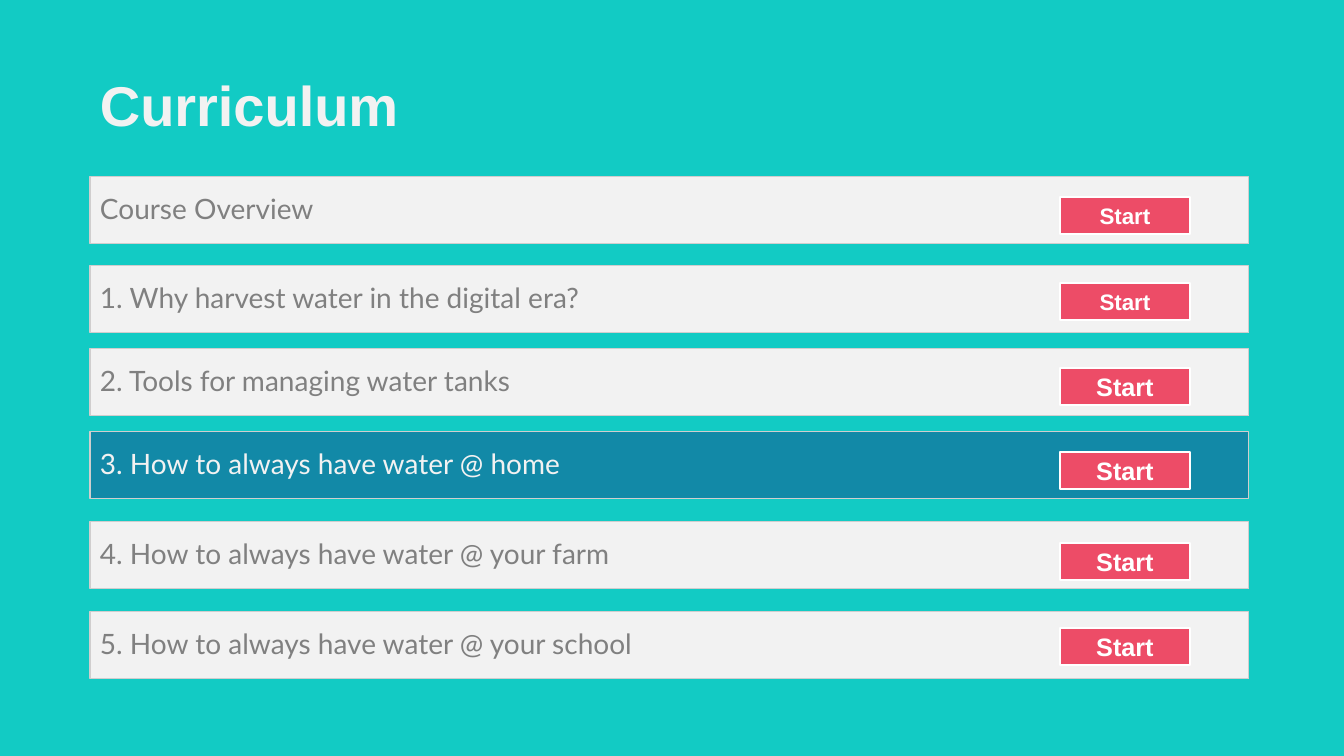
"""Build the curriculum slide with its six lesson bars and start buttons."""
from pptx import Presentation
from pptx.dml.color import RGBColor
from pptx.enum.shapes import MSO_SHAPE as Preset
from pptx.enum.text import MSO_ANCHOR as Anchor, PP_ALIGN as Align
from pptx.util import Pt

HEADING = "Curriculum"
START = "Start"
CURRENT = "3. How to always have water @ home"
LESSONS = [
    ("Course Overview", 177, 197, 16),
    ("1. Why harvest water in the digital era?", 266, 283, 16),
    ("2. Tools for managing water tanks", 349, 368, 18),
    (CURRENT, 432, 452, 18),
    ("4. How to always have water @ your farm", 522, 543, 18),
    ("5. How to always have water @ your school", 612, 628, 18),
]
THEME = {
    "background": "12CBC4", "bar": "F2F2F2", "current": "1289A7",
    "border": "D0CECE", "lesson": "808080", "light": "F2F2F2",
    "button": "ED4C67", "white": "FFFFFF",
    "heading_font": "Arial", "lesson_font": "Lato",
    "heading_size": 40, "lesson_size": 20,
}
SLIDE_W, SLIDE_H = 1344, 756
BAR_X, BAR_W, BAR_H = 90, 1159, 67
BUTTON_X, BUTTON_W, BUTTON_H = 1060, 130, 37
HEADING_Y, HEADING_H = 70, 77
EMU_PER_PX = 12192000 / SLIDE_W


def px(length):
    return round(length * EMU_PER_PX)


def color(part):
    return RGBColor.from_string(THEME[part])


def write(holder, words, font, size, ink, bold=False, align=Align.LEFT, spacing=0.9):
    frame = holder.text_frame
    frame.word_wrap = True
    frame.vertical_anchor = Anchor.MIDDLE
    line = frame.paragraphs[0]
    line.alignment = align
    line.line_spacing = spacing
    run = line.add_run()
    run.text = words
    run.font.name = THEME[font]
    run.font.size = Pt(size)
    run.font.bold = bold
    run.font.color.rgb = color(ink)


def panel(slide, x, y, w, h, fill, border, weight):
    box = slide.shapes.add_shape(Preset.RECTANGLE, px(x), px(y), px(w), px(h))
    box.shadow.inherit = False
    box.fill.solid()
    box.fill.fore_color.rgb = color(fill)
    box.line.color.rgb = color(border)
    box.line.width = Pt(weight)
    return box


def main():
    deck = Presentation()
    deck.slide_width, deck.slide_height = px(SLIDE_W), px(SLIDE_H)
    slide = deck.slides.add_slide(deck.slide_layouts[6])
    slide.background.fill.solid()
    slide.background.fill.fore_color.rgb = color("background")

    heading = slide.shapes.add_textbox(px(BAR_X), px(HEADING_Y), px(BAR_W), px(HEADING_H))
    write(heading, HEADING, "heading_font", THEME["heading_size"], "light", bold=True)

    for lesson, bar_y, button_y, start_size in LESSONS:
        fill, ink = ("current", "light") if lesson == CURRENT else ("bar", "lesson")
        bar = panel(slide, BAR_X, bar_y, BAR_W, BAR_H, fill, "border", 0.75)
        write(bar, lesson, "lesson_font", THEME["lesson_size"], ink)
        button = panel(slide, BUTTON_X, button_y, BUTTON_W, BUTTON_H, "button", "white", 1)
        write(button, START, "heading_font", start_size, "white",
              bold=True, align=Align.CENTER, spacing=1.0)

    deck.save("out.pptx")


if __name__ == "__main__":
    main()
